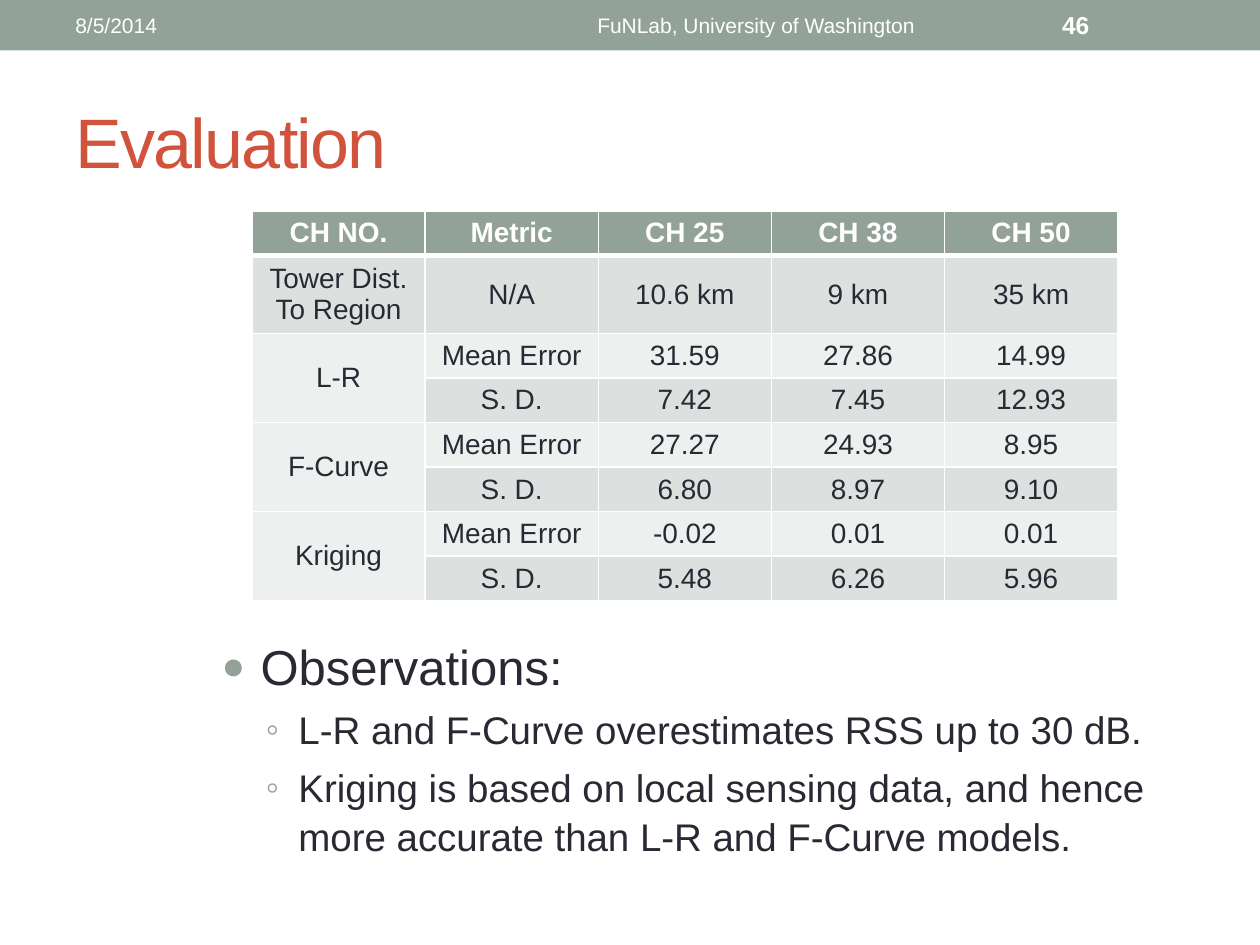
from lxml.etree import SubElement
from pptx import Presentation
from pptx.dml.color import RGBColor
from pptx.enum.shapes import MSO_SHAPE
from pptx.enum.text import MSO_ANCHOR, PP_ALIGN
from pptx.oxml.ns import qn
from pptx.util import Cm, Pt

SAGE = RGBColor(0x93, 0xA2, 0x99)
RUST = RGBColor(0xD2, 0x53, 0x3C)
INK = RGBColor(0x29, 0x29, 0x34)
WHITE = RGBColor(0xFF, 0xFF, 0xFF)
BAND_DARK = RGBColor(0xDC, 0xE0, 0xDE)
BAND_LIGHT = RGBColor(0xEE, 0xF0, 0xEF)


def set_font(paragraph, size, color, bold=False):
    font = paragraph.font
    font.name, font.size, font.bold = "Arial", Pt(size), bold
    font.color.rgb = color


def add_border(cell, side, width):
    line = SubElement(cell._tc.get_or_add_tcPr(), qn(f"a:{side}"), w=str(Pt(width)))
    fill = SubElement(line, qn("a:solidFill"))
    SubElement(fill, qn("a:srgbClr"), val=str(WHITE))


presentation = Presentation()
presentation.slide_width, presentation.slide_height = Cm(25.4), Cm(19.05)
slide = presentation.slides.add_slide(presentation.slide_layouts[5])

# Header band
band = slide.shapes.add_shape(MSO_SHAPE.RECTANGLE, 0, 0, Cm(25.4), Cm(1.02))
band.shadow.inherit = False
band.fill.solid()
band.fill.fore_color.rgb = SAGE
band.line.fill.background()

header_items = [
    ("8/5/2014", 1.27, 8.05, PP_ALIGN.LEFT, 12, False),
    ("FuNLab, University of Washington", 9.53, 11.43, PP_ALIGN.CENTER, 12, False),
    ("46", 21.16, 2.97, PP_ALIGN.LEFT, 14, True),
]
for text, left, width, alignment, size, bold in header_items:
    frame = slide.shapes.add_textbox(Cm(left), Cm(0.05), Cm(width), Cm(0.91)).text_frame
    frame.word_wrap = True
    frame.vertical_anchor = MSO_ANCHOR.MIDDLE
    paragraph = frame.paragraphs[0]
    paragraph.text = text
    paragraph.alignment = alignment
    set_font(paragraph, size, WHITE, bold)

# Title
title = slide.shapes.title
title.left, title.top, title.width, title.height = Cm(1.27), Cm(1.47), Cm(22.86), Cm(2.74)
title.text_frame.vertical_anchor = MSO_ANCHOR.MIDDLE
paragraph = title.text_frame.paragraphs[0]
paragraph.alignment = PP_ALIGN.LEFT
run = paragraph.add_run()
run.text = "Evaluation"
run.font._element.set("spc", "-100")
set_font(paragraph, 40, RUST)

# Results table
rows = [
    ["CH NO.", "Metric", "CH 25", "CH 38", "CH 50"],
    ["Tower Dist. To Region", "N/A", "10.6 km", "9 km", "35 km"],
    ["L-R", "Mean Error", "31.59", "27.86", "14.99"],
    ["", "S. D.", "7.42", "7.45", "12.93"],
    ["F-Curve", "Mean Error", "27.27", "24.93", "8.95"],
    ["", "S. D.", "6.80", "8.97", "9.10"],
    ["Kriging", "Mean Error", "-0.02", "0.01", "0.01"],
    ["", "S. D.", "5.48", "6.26", "5.96"],
]
table = slide.shapes.add_table(
    len(rows), len(rows[0]), Cm(5.08), Cm(4.25), Cm(17.45), Cm(7.67)
).table
for column in table.columns:
    column.width = Cm(3.49)
for row_index, values in enumerate(rows):
    table.rows[row_index].height = Cm(1.51 if row_index == 1 else 0.88)
    is_header = row_index == 0
    for column_index, value in enumerate(values):
        cell = table.cell(row_index, column_index)
        cell.margin_top = cell.margin_bottom = Cm(0.11)
        cell.vertical_anchor = MSO_ANCHOR.MIDDLE
        paragraph = cell.text_frame.paragraphs[0]
        paragraph.text = value
        paragraph.alignment = PP_ALIGN.CENTER
        set_font(paragraph, 16, WHITE if is_header else INK, is_header)
        for side in ("lnL", "lnR", "lnT", "lnB"):
            thick = (row_index, side) in ((0, "lnB"), (1, "lnT"))
            add_border(cell, side, 3 if thick else 1)
        cell.fill.solid()
        band_color = BAND_DARK if row_index % 2 else BAND_LIGHT
        cell.fill.fore_color.rgb = SAGE if is_header else band_color
for row_index in (2, 4, 6):
    table.cell(row_index, 0).merge(table.cell(row_index + 1, 0))

# Observations
observations = [
    ("Observations:", 0, 28),
    ("L-R and F-Curve overestimates RSS up to 30 dB.", 1, 22),
    ("Kriging is based on local sensing data, and hence more accurate "
     "than L-R and F-Curve models.", 1, 22),
]
bullet_styles = [("●", 80, 0.4, -0.31, 6), ("◦", 100, 0.7, -0.26, 5)]
frame = slide.shapes.add_textbox(Cm(3.99), Cm(12.7), Cm(20.83), Cm(5.59)).text_frame
frame.word_wrap = True
for index, (text, level, size) in enumerate(observations):
    paragraph = frame.paragraphs[0] if index == 0 else frame.add_paragraph()
    paragraph.text = text
    paragraph.level = level
    set_font(paragraph, size, INK)
    bullet, percent, margin, indent, space = bullet_styles[level]
    paragraph.space_before = Pt(space)
    paragraph.line_spacing = 1.06 if level else 1.0
    properties = paragraph._p.get_or_add_pPr()
    properties.set("marL", str(Cm(margin * 2.54)))
    properties.set("indent", str(Cm(indent * 2.54)))
    bullet_color = SubElement(properties, qn("a:buClr"))
    SubElement(bullet_color, qn("a:srgbClr"), val=str(SAGE))
    SubElement(properties, qn("a:buSzPct"), val=str(percent * 1000))
    SubElement(properties, qn("a:buFont"), typeface="Arial")
    SubElement(properties, qn("a:buChar"), char=bullet)
    # The schema wants the default run properties after the bullet
    properties.append(properties.find(qn("a:defRPr")))

presentation.save("out.pptx")
